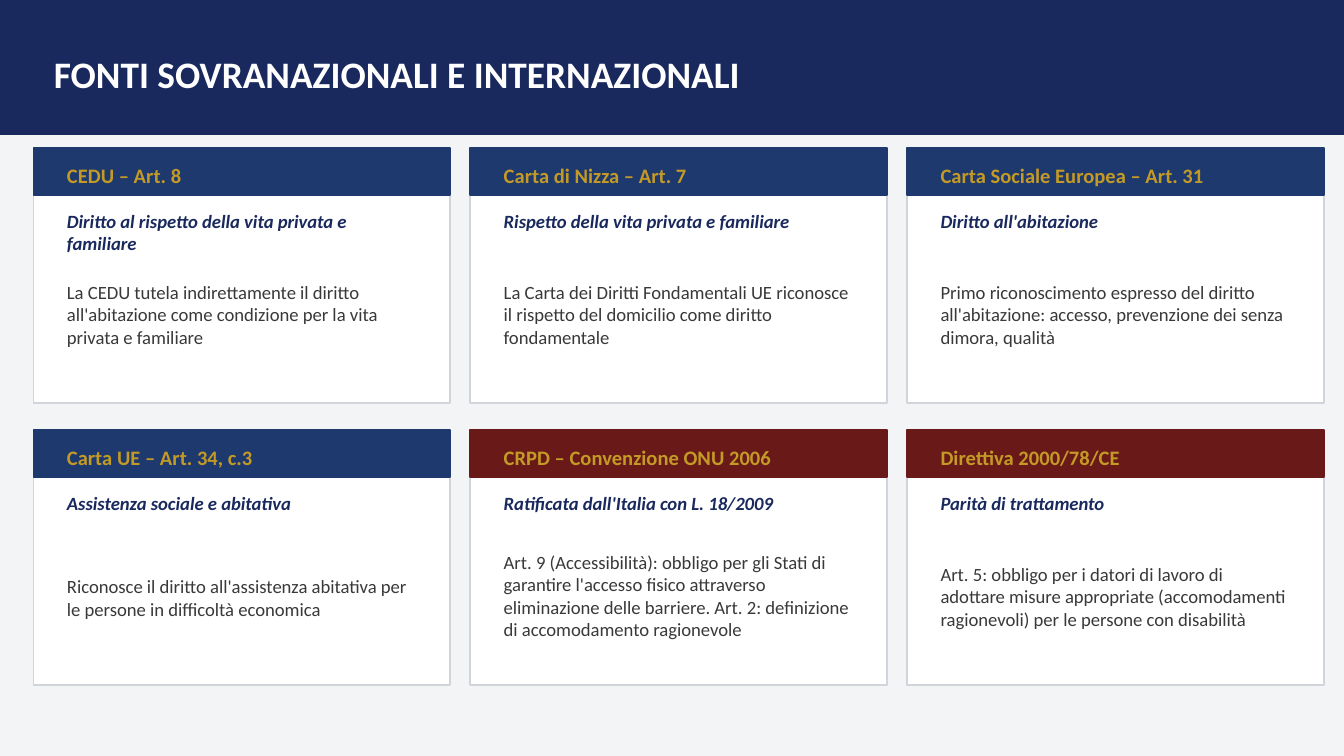
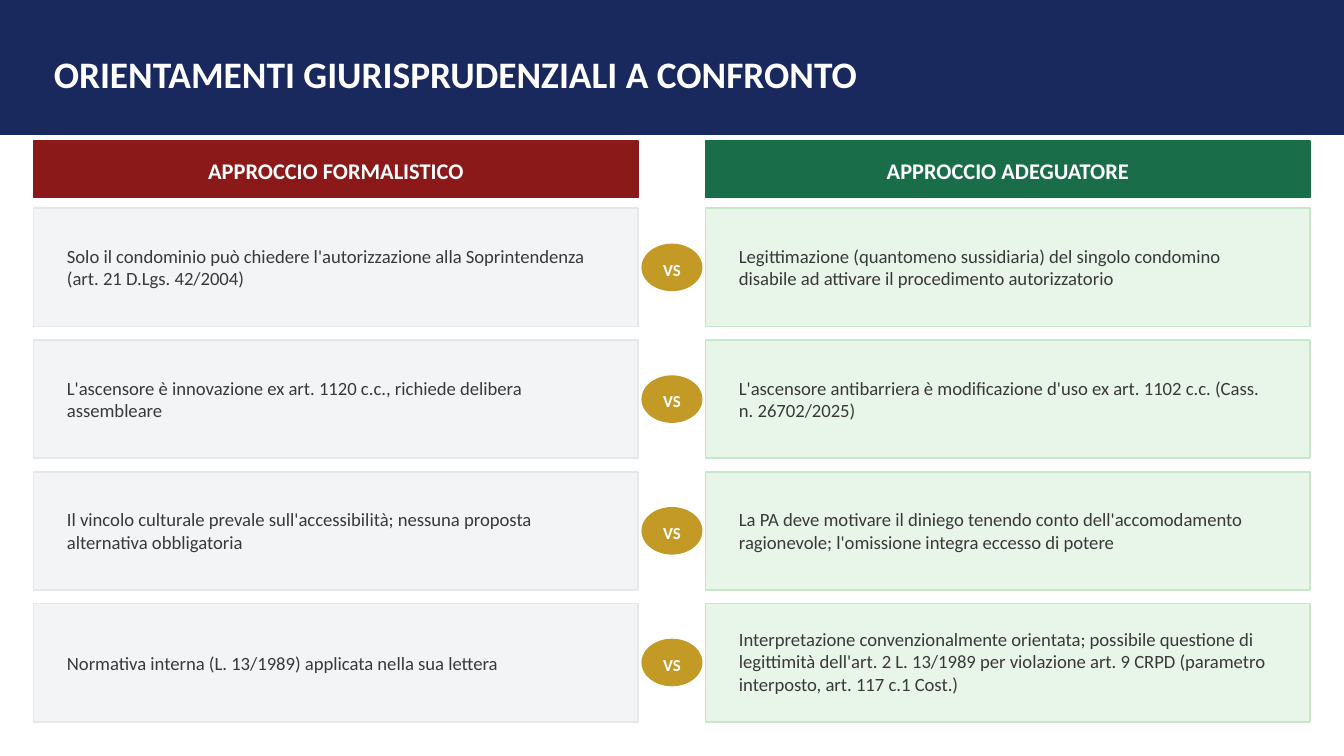
import math

import pptx
import pptx.dml.color
import pptx.enum.shapes
import pptx.enum.text
import pptx.util

Pt = pptx.util.Pt
SHAPES = pptx.enum.shapes.MSO_SHAPE
ALIGN = pptx.enum.text.PP_ALIGN

NAVY, BLUE, GOLD = "19295D", "1D396D", "C49A27"
MAROON, RED, GREEN = "6A1919", "8B1919", "196D49"
WHITE, PALE, MINT = "FFFFFF", "F3F4F6", "E8F5E9"
CARD_EDGE, PALE_EDGE, MINT_EDGE = "D1D5DB", "E5E7EB", "C8E6C9"
INK = "393939"

CARDS = [
    ("CEDU – Art. 8", BLUE, "Diritto al rispetto della vita privata e familiare",
     "La CEDU tutela indirettamente il diritto all'abitazione come condizione "
     "per la vita privata e familiare"),
    ("Carta di Nizza – Art. 7", BLUE, "Rispetto della vita privata e familiare",
     "La Carta dei Diritti Fondamentali UE riconosce il rispetto del domicilio "
     "come diritto fondamentale"),
    ("Carta Sociale Europea – Art. 31", BLUE, "Diritto all'abitazione",
     "Primo riconoscimento espresso del diritto all'abitazione: accesso, "
     "prevenzione dei senza dimora, qualità"),
    ("Carta UE – Art. 34, c.3", BLUE, "Assistenza sociale e abitativa",
     "Riconosce il diritto all'assistenza abitativa per le persone in "
     "difficoltà economica"),
    ("CRPD – Convenzione ONU 2006", MAROON, "Ratificata dall'Italia con L. 18/2009",
     "Art. 9 (Accessibilità): obbligo per gli Stati di garantire l'accesso "
     "fisico attraverso eliminazione delle barriere. Art. 2: definizione di "
     "accomodamento ragionevole"),
    ("Direttiva 2000/78/CE", MAROON, "Parità di trattamento",
     "Art. 5: obbligo per i datori di lavoro di adottare misure appropriate "
     "(accomodamenti ragionevoli) per le persone con disabilità"),
]

COMPARISONS = [
    ("Solo il condominio può chiedere l'autorizzazione alla Soprintendenza "
     "(art. 21 D.Lgs. 42/2004)",
     "Legittimazione (quantomeno sussidiaria) del singolo condomino disabile "
     "ad attivare il procedimento autorizzatorio"),
    ("L'ascensore è innovazione ex art. 1120 c.c., richiede delibera assembleare",
     "L'ascensore antibarriera è modificazione d'uso ex art. 1102 c.c. "
     "(Cass. n. 26702/2025)"),
    ("Il vincolo culturale prevale sull'accessibilità; nessuna proposta "
     "alternativa obbligatoria",
     "La PA deve motivare il diniego tenendo conto dell'accomodamento "
     "ragionevole; l'omissione integra eccesso di potere"),
    ("Normativa interna (L. 13/1989) applicata nella sua lettera",
     "Interpretazione convenzionalmente orientata; possibile questione di "
     "legittimità dell'art. 2 L. 13/1989 per violazione art. 9 CRPD "
     "(parametro interposto, art. 117 c.1 Cost.)"),
]


def rgb(color):
    return pptx.dml.color.RGBColor.from_string(color)


def text_height(text, w):
    """Estimate the height of a wrapped 10 pt text box of width w."""
    chars_per_line = (w - 14.4) / 4.25
    return 5 + 13 * math.ceil(len(text) / chars_per_line)


class Deck:
    font = "Calibri"

    def __init__(self):
        self.prs = pptx.Presentation()
        self.prs.slide_width, self.prs.slide_height = Pt(720), Pt(405)
        self.s = None

    def slide(self, title, background):
        self.s = self.prs.slides.add_slide(self.prs.slide_layouts[5])
        fill = self.s.background.fill
        fill.solid()
        fill.fore_color.rgb = rgb(background)
        self.shape(0, 0, 720, 72, NAVY)
        sp = self.s.shapes.title
        sp.element.getparent().append(sp.element)  # bring in front of the band
        sp.left, sp.top, sp.width, sp.height = map(Pt, (21.6, 23.76, 676.8, 27.36))
        self.set_text(sp, title, WHITE, size=20, bold=True)

    def shape(self, x, y, w, h, fill, line=None, kind=SHAPES.RECTANGLE):
        sp = self.s.shapes.add_shape(kind, Pt(x), Pt(y), Pt(w), Pt(h))
        sp.shadow.inherit = False
        sp.fill.solid()
        sp.fill.fore_color.rgb = rgb(fill)
        sp.line.color.rgb = rgb(line or fill)
        sp.line.width = Pt(1)

    def text(self, x, y, w, h, text, color, **style):
        sp = self.s.shapes.add_textbox(Pt(x), Pt(y), Pt(w), Pt(h))
        self.set_text(sp, text, color, **style)

    def body(self, x, middle, w, text):
        """Add running text centred vertically on the given height."""
        h = text_height(text, w)
        self.text(x, middle - h / 2, w, h, text, INK)

    def set_text(self, sp, text, color, size=10, align=ALIGN.LEFT, **style):
        tf = sp.text_frame
        frame = {
            "word_wrap": True,
            "auto_size": pptx.enum.text.MSO_AUTO_SIZE.SHAPE_TO_FIT_TEXT,
            "vertical_anchor": pptx.enum.text.MSO_ANCHOR.TOP,
            "margin_left": Pt(7.2), "margin_right": Pt(7.2),
            "margin_top": Pt(3.6), "margin_bottom": Pt(3.6),
        }
        for name, value in frame.items():
            setattr(tf, name, value)
        p = tf.paragraphs[0]
        p.alignment = align
        r = p.add_run()
        r.text = text
        for name, value in {"name": self.font, "size": Pt(size), **style}.items():
            setattr(r.font, name, value)
        r.font.color.rgb = rgb(color)

    def card(self, x, y, heading, color, subtitle, text):
        w, inner_x, inner_w = 223.2, x + 10.8, 201.6
        self.shape(x, y, w, 136.8, WHITE, CARD_EDGE)
        self.shape(x, y, w, 25.2, color)
        self.text(inner_x, y + 4.32, inner_w, 18, heading, GOLD, size=11, bold=True)
        self.text(inner_x, y + 29.52, inner_w, text_height(subtitle, inner_w),
                  subtitle, NAVY, bold=True, italic=True)
        self.body(inner_x, y + 89.64, inner_w, text)

    def column_header(self, x, text, color):
        self.shape(x, 75.6, 324, 30.24, color)
        self.text(x + 7.2, 80.64, 309.6, 19.44, text, WHITE,
                  size=12, align=ALIGN.CENTER, bold=True)

    def argument(self, x, y, text, fill, line):
        self.shape(x, y, 324, 63.36, fill, line)
        self.body(x + 10.8, y + 31.5, 302.4, text)

    def versus(self, y):
        self.shape(344.16, y + 19.44, 31.68, 24.48, GOLD, kind=SHAPES.OVAL)
        self.text(347.76, y + 23.76, 24.48, 16.56, "VS", WHITE,
                  size=9, align=ALIGN.CENTER, bold=True)


def sources_slide(deck):
    deck.slide("FONTI SOVRANAZIONALI E INTERNAZIONALI", PALE)
    for i, card in enumerate(CARDS):
        row, col = divmod(i, 3)
        deck.card(18 + 234 * col, 79.2 + 151.2 * row, *card)


def comparison_slide(deck):
    deck.slide("ORIENTAMENTI GIURISPRUDENZIALI A CONFRONTO", WHITE)
    left, right = 18, 378
    deck.column_header(left, "APPROCCIO FORMALISTICO", RED)
    deck.column_header(right, "APPROCCIO ADEGUATORE", GREEN)
    for i, (formal, adaptive) in enumerate(COMPARISONS):
        y = 111.6 + 70.56 * i
        deck.argument(left, y, formal, PALE, PALE_EDGE)
        deck.versus(y)
        deck.argument(right, y, adaptive, MINT, MINT_EDGE)


def main():
    deck = Deck()
    sources_slide(deck)
    comparison_slide(deck)
    deck.prs.save("out.pptx")


if __name__ == "__main__":
    main()
